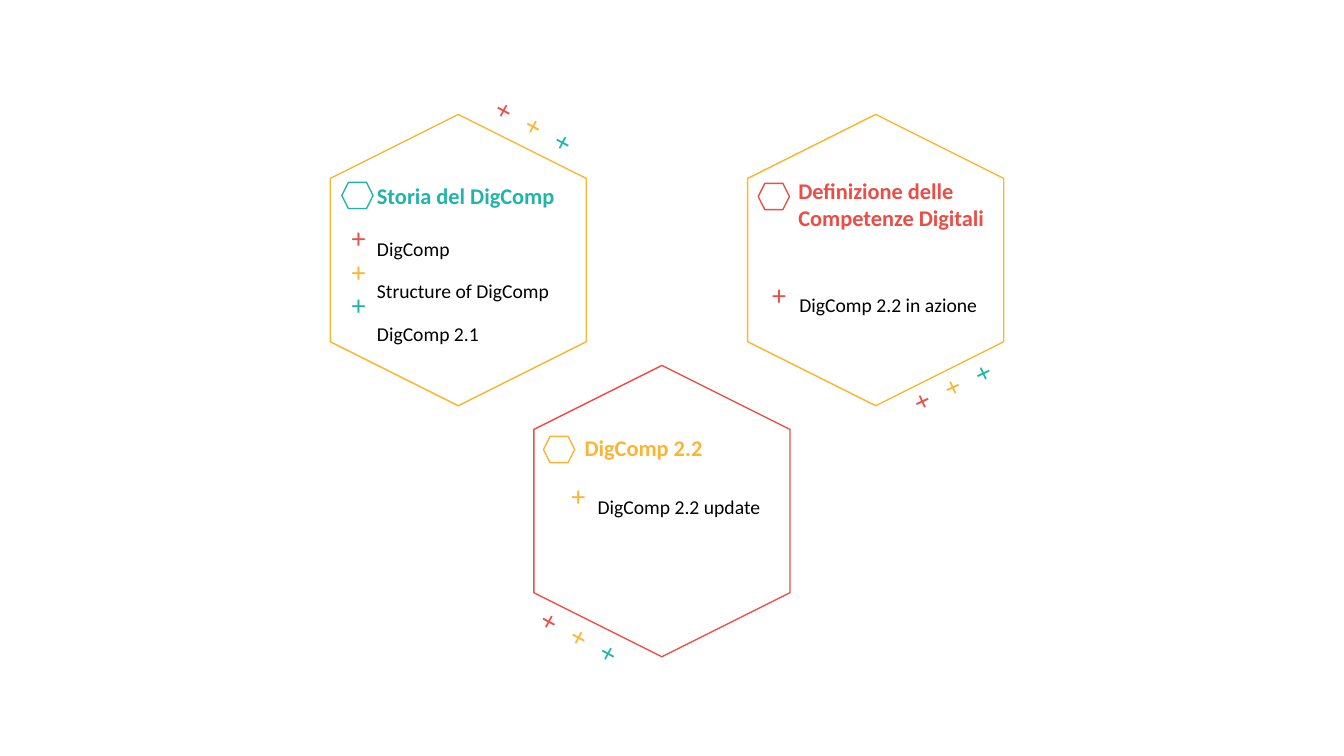
from dataclasses import dataclass

from pptx import Presentation
from pptx.dml.color import RGBColor
from pptx.enum.shapes import MSO_SHAPE
from pptx.enum.text import MSO_AUTO_SIZE, PP_ALIGN
from pptx.slide import Slide
from pptx.text.text import TextFrame
from pptx.util import Inches, Pt


@dataclass(frozen=True)
class Theme:
    red: RGBColor = RGBColor(0xEA, 0x4E, 0x46)
    yellow: RGBColor = RGBColor(0xFA, 0xB6, 0x32)
    teal: RGBColor = RGBColor(0x21, 0xB4, 0xA9)
    black: RGBColor = RGBColor(0, 0, 0)
    font: str = "Calibri"
    heading: Pt = Pt(16)
    body: Pt = Pt(14)
    plus: Pt = Pt(20)
    line: Pt = Pt(1)
    spacing: float = 1.79


THEME = Theme()
TRIO = (THEME.red, THEME.yellow, THEME.teal)


@dataclass(frozen=True)
class Box:
    left: float
    top: float
    width: float
    height: float


@dataclass(frozen=True)
class Pluses:
    box: Box
    colors: tuple[RGBColor, ...] = TRIO
    rotation: float = 0


@dataclass(frozen=True)
class Topic:
    outline: Box
    outline_color: RGBColor
    badge: Box
    color: RGBColor
    title: str
    title_box: Box
    items: tuple[str, ...]
    items_box: Box
    markers: Pluses
    accent: Pluses
    align: PP_ALIGN = PP_ALIGN.LEFT


TOPICS = (
    Topic(
        Box(3.1, 1.31, 2.89, 2.54), THEME.yellow,
        Box(3.39, 1.81, 0.31, 0.26), THEME.teal,
        "Storia del DigComp", Box(3.64, 1.76, 2.41, 0.37),
        ("DigComp", "Structure of DigComp", "DigComp 2.1"),
        Box(3.64, 2.12, 2.62, 1.18),
        Pluses(Box(3.39, 2.14, 0.3, 1.11)),
        Pluses(Box(5.08, 0.66, 0.43, 1.11), rotation=298.4),
    ),
    Topic(
        Box(7.24, 1.31, 2.89, 2.54), THEME.yellow,
        Box(7.52, 1.82, 0.31, 0.26), THEME.red,
        "Definizione delle Competenze Digitali", Box(7.82, 1.71, 2.13, 0.64),
        ("DigComp 2.2 in azione",), Box(7.83, 2.67, 2.23, 0.34),
        Pluses(Box(7.56, 2.7, 0.3, 0.44), (THEME.red,)),
        Pluses(Box(9.2, 3.26, 0.43, 1.11), rotation=245.1),
    ),
    Topic(
        Box(5.12, 3.8, 2.89, 2.54), THEME.red,
        Box(5.39, 4.33, 0.31, 0.26), THEME.yellow,
        "DigComp 2.2", Box(5.7, 4.26, 2.41, 0.37),
        ("DigComp 2.2 update",), Box(5.02, 4.68, 2.62, 0.34),
        Pluses(Box(5.57, 4.7, 0.3, 0.44), (THEME.yellow,)),
        Pluses(Box(5.53, 5.73, 0.43, 1.11), rotation=298.4),
        PP_ALIGN.RIGHT,
    ),
)


def place(box: Box) -> tuple[Inches, ...]:
    return tuple(Inches(v) for v in (box.left, box.top, box.width, box.height))


def add_hexagon(slide: Slide, box: Box, color: RGBColor, rotation: float = 0) -> None:
    s = slide.shapes.add_shape(MSO_SHAPE.HEXAGON, *place(box))
    s.rotation = rotation
    s.shadow.inherit = False
    s.fill.background()
    s.line.color.rgb = color
    s.line.width = THEME.line


def add_text(slide: Slide, box: Box, rotation: float = 0) -> TextFrame:
    s = slide.shapes.add_textbox(*place(box))
    s.rotation = rotation
    tf = s.text_frame
    tf.word_wrap = True
    tf.auto_size = MSO_AUTO_SIZE.SHAPE_TO_FIT_TEXT
    return tf


def add_title(slide: Slide, topic: Topic) -> None:
    p = add_text(slide, topic.title_box).paragraphs[0]
    p.text = topic.title
    p.font.name = THEME.font
    p.font.size = THEME.heading
    p.font.bold = True
    p.font.color.rgb = topic.color


def add_items(slide: Slide, topic: Topic) -> None:
    tf = add_text(slide, topic.items_box)
    tf.text = "\n".join(topic.items)
    for p in tf.paragraphs:
        p.alignment = topic.align
        p.line_spacing = THEME.spacing
        p.font.name = THEME.font
        p.font.size = THEME.body
        p.font.color.rgb = THEME.black


def add_pluses(slide: Slide, pluses: Pluses) -> None:
    p = add_text(slide, pluses.box, pluses.rotation).paragraphs[0]
    p.font.name = THEME.font
    p.font.size = THEME.plus
    for color in pluses.colors:
        r = p.add_run()
        r.text = "+"
        r.font.color.rgb = color


def add_topic(slide: Slide, topic: Topic) -> None:
    add_items(slide, topic)
    add_title(slide, topic)
    add_hexagon(slide, topic.badge, topic.color)
    add_hexagon(slide, topic.outline, topic.outline_color, 90)
    add_pluses(slide, topic.markers)
    add_pluses(slide, topic.accent)


def main() -> None:
    prs = Presentation()
    prs.slide_width = Inches(13.33)
    prs.slide_height = Inches(7.5)
    slide = prs.slides.add_slide(prs.slide_layouts[6])
    for topic in TOPICS:
        add_topic(slide, topic)
    prs.save("out.pptx")


if __name__ == "__main__":
    main()
